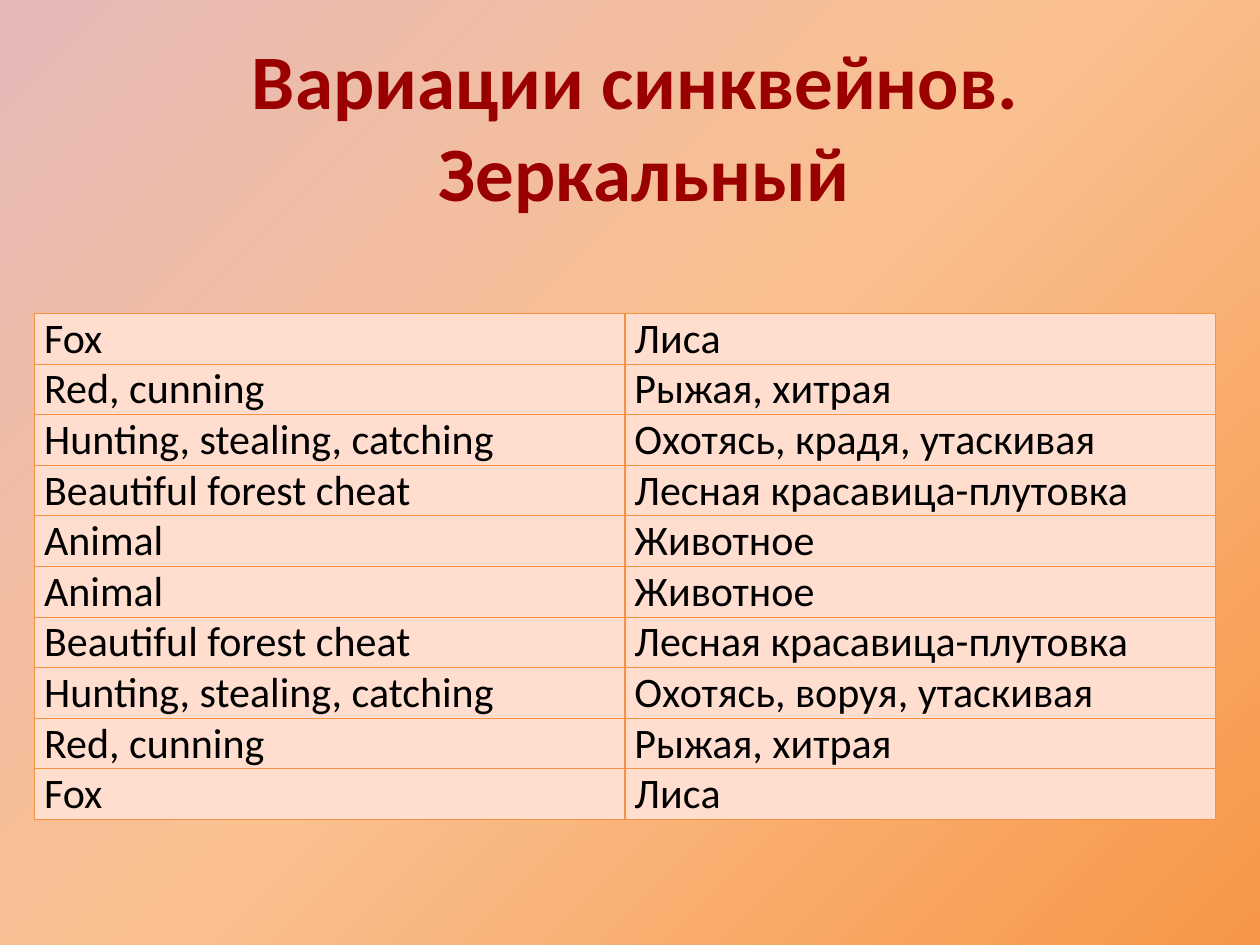
import pptx
import pptx.dml.color
import pptx.enum.text
import pptx.oxml.ns
import pptx.util
from lxml import etree

Cm = pptx.util.Cm
Pt = pptx.util.Pt
RGBColor = pptx.dml.color.RGBColor
qn = pptx.oxml.ns.qn

DARK_RED = RGBColor(0x9A, 0x00, 0x00)
BLACK = RGBColor(0x00, 0x00, 0x00)
CELL_FILL = RGBColor(0xFF, 0xDE, 0xCF)
BORDER = RGBColor(0xF6, 0x92, 0x40)
ORANGE = RGBColor(0xF7, 0x96, 0x46)
PEACH = RGBColor(0xFA, 0xC0, 0x90)
PINK = RGBColor(0xE6, 0xB9, 0xB8)

FONT = "Calibri"
TITLE = ["Вариации синквейнов. ", "Зеркальный"]
ROWS = [
    ("Fox", "Лиса"),
    ("Red, cunning", "Рыжая, хитрая"),
    ("Hunting, stealing, catching", "Охотясь, крадя, утаскивая"),
    ("Beautiful forest cheat", "Лесная красавица-плутовка"),
    ("Animal", "Животное"),
    ("Animal", "Животное"),
    ("Beautiful forest cheat", "Лесная красавица-плутовка"),
    ("Hunting, stealing, catching", "Охотясь, воруя, утаскивая"),
    ("Red, cunning", "Рыжая, хитрая"),
    ("Fox", "Лиса"),
]


def add_element(parent, tag, **attributes):
    return etree.SubElement(parent, qn(tag), attributes)


def style_paragraph(p, size, color, bold=False):
    p.font.name = FONT
    p.font.size = Pt(size)
    p.font.bold = bold
    p.font.color.rgb = color


def set_background(s):
    s.background.fill.gradient()
    grad = s.element.find(".//" + qn("a:gradFill"))
    for child in list(grad):
        grad.remove(child)
    stops = add_element(grad, "a:gsLst")
    for position, color in ((0, ORANGE), (50, PEACH), (100, PINK)):
        stop = add_element(stops, "a:gs", pos=str(position * 1000))
        add_element(stop, "a:srgbClr", val=str(color))
    circle = add_element(grad, "a:path", path="circle")
    add_element(circle, "a:fillToRect", l="100000", t="100000")


def add_title(s):
    sp = s.shapes.add_textbox(Cm(0.58), Cm(0.53), Cm(24.82), Cm(4.01))
    tf = sp.text_frame
    tf.word_wrap = True
    tf.text = "\n".join(TITLE)
    for p in tf.paragraphs:
        p.alignment = pptx.enum.text.PP_ALIGN.CENTER
        style_paragraph(p, 44, DARK_RED, bold=True)


def set_borders(cell):
    properties = cell._tc.get_or_add_tcPr()
    for tag in ("a:lnL", "a:lnR", "a:lnT", "a:lnB"):
        line = add_element(properties, tag, w=str(Pt(0.75)))
        fill = add_element(line, "a:solidFill")
        add_element(fill, "a:srgbClr", val=str(BORDER))


def fill_cell(cell, text):
    set_borders(cell)
    cell.fill.solid()
    cell.fill.fore_color.rgb = CELL_FILL
    cell.margin_left = cell.margin_right = Cm(0.19)
    cell.margin_top = cell.margin_bottom = 0
    cell.text = text
    style_paragraph(cell.text_frame.paragraphs[0], 24, BLACK)


def add_verse_table(s):
    height = Cm(1.02) * len(ROWS)
    frame = s.shapes.add_table(len(ROWS), 2, Cm(0.7), Cm(6.32), Cm(23.8), height)
    table = frame.table
    table.first_row = False
    table.horz_banding = False
    for i, row in enumerate(ROWS):
        for j, text in enumerate(row):
            fill_cell(table.cell(i, j), text)


def main():
    prs = pptx.Presentation()
    prs.slide_width = Cm(25.4)
    prs.slide_height = Cm(19.05)
    s = prs.slides.add_slide(prs.slide_layouts[6])
    set_background(s)
    add_title(s)
    add_verse_table(s)
    prs.save("out.pptx")


if __name__ == "__main__":
    main()
